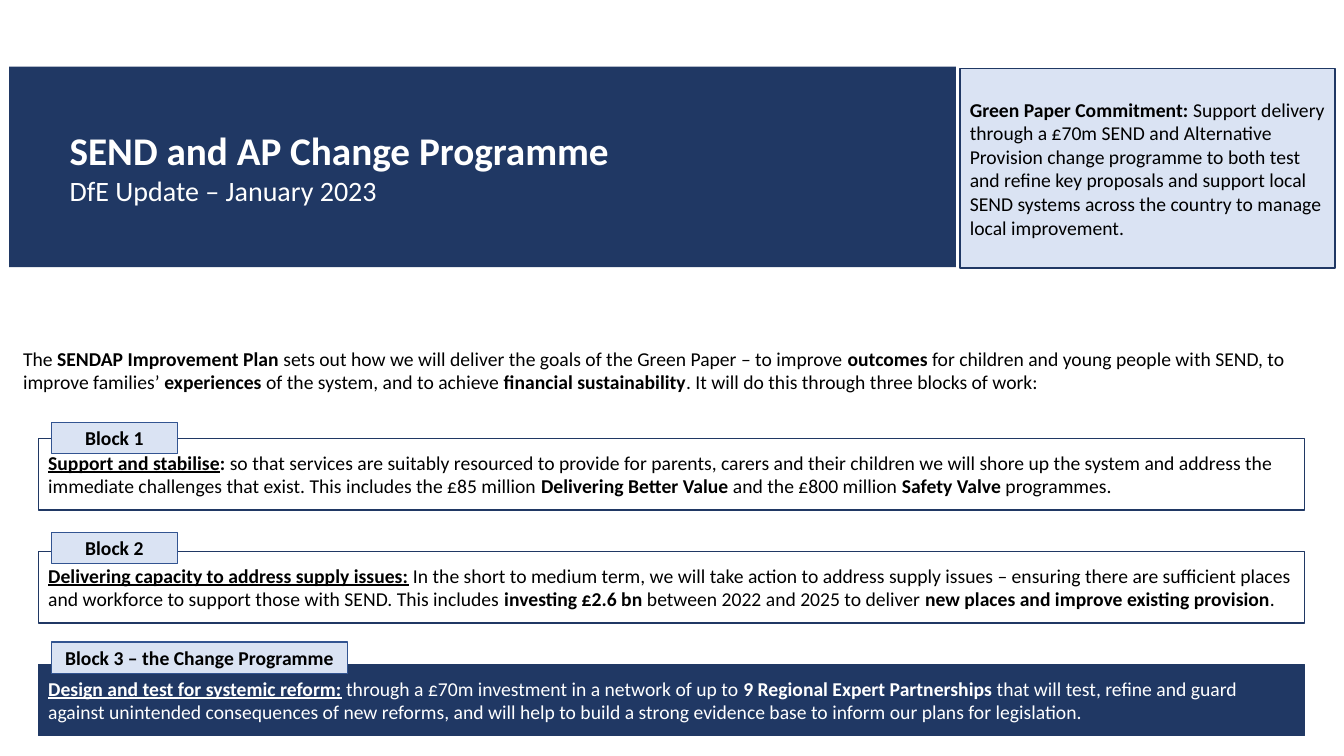
from pptx import Presentation
from pptx import util as u
from pptx.dml import color
from pptx.enum import shapes, text

PX = 9144  # 100 px to the inch
COLOURS = {"navy": "203864", "pale": "DAE3F3", "edge": "325491",
           "white": "FFFFFF", "black": "000000"}


def rgb(name):
    return color.RGBColor.from_string(COLOURS[name])


def add_box(place, fill, line, ink, spans, align=text.PP_ALIGN.LEFT):
    """Add a rectangle; each span is (words, style), b for bold, u for underline."""
    box = page.shapes.add_shape(shapes.MSO_SHAPE.RECTANGLE, *[n * PX for n in place])
    box.shadow.inherit = False
    box.fill.solid()
    box.fill.fore_color.rgb = rgb(fill)
    if line:
        box.line.color.rgb = rgb(line)
        box.line.width = u.Pt(1)
    else:
        box.line.fill.background()
    frame = box.text_frame
    frame.word_wrap = True
    frame.vertical_anchor = text.MSO_ANCHOR.MIDDLE
    para = frame.paragraphs[0]
    para.alignment = align
    para.font.name = "Calibri"
    para.font.size = u.Pt(14)
    for words, style in spans:
        span = para.add_run()
        span.text = words
        span.font.color.rgb = rgb(ink)
        span.font.bold = "b" in style
        span.font.underline = "u" in style


deck = Presentation()
deck.slide_width, deck.slide_height = 1333 * PX, 750 * PX
page = deck.slides.add_slide(deck.slide_layouts[5])

# Title banner
title = page.shapes.title
title.left, title.top, title.width, title.height = [n * PX for n in (9, 66, 939, 199)]
title.fill.solid()
title.fill.fore_color.rgb = rgb("navy")
frame = title.text_frame
frame.text = "SEND and AP Change Programme\nDfE Update – January 2023"
frame.word_wrap = True
frame.auto_size = text.MSO_AUTO_SIZE.NONE
frame.vertical_anchor = text.MSO_ANCHOR.MIDDLE
frame.margin_left = 60 * PX
for para, size, bold in zip(frame.paragraphs, (28, 20), (True, False)):
    para.alignment = text.PP_ALIGN.LEFT
    para.font.name = "Calibri"
    para.font.size = u.Pt(size)
    para.font.bold = bold
    para.font.color.rgb = rgb("white")

# Commitment panel
add_box((952, 68, 372, 198), "pale", "navy", "black", [
    ("Green Paper Commitment:", "b"),
    (" Support delivery through a £70m SEND and Alternative Provision change "
     "programme to both test and refine key proposals and support local SEND "
     "systems across the country to manage local improvement.", ""),
])

# Introduction
add_box((13, 328, 1308, 78), "white", None, "black", [
    ("The ", ""),
    ("SENDAP Improvement Plan ", "b"),
    ("sets out how we will deliver the goals of the Green Paper – to improve", ""),
    (" outcomes ", "b"),
    ("for children and young people with SEND, to improve families’ ", ""),
    ("experiences", "b"),
    (" of the system, and to achieve ", ""),
    ("financial sustainability", "b"),
    (". It will do this through three blocks of work:", ""),
])

# Blocks of work: label, label top, label width, body top, fill, ink, spans
blocks = [
    ("Block 1", 419, 125, 435, "white", "black", [
        ("Support and stabilise", "bu"),
        (":", "b"),
        (" so that services are suitably resourced to provide for parents, carers "
         "and their children we will shore up the system and address the immediate "
         "challenges that exist. This includes the £85 million ", ""),
        ("Delivering Better Value", "b"),
        (" and the £800 million ", ""),
        ("Safety Valve", "b"),
        (" programmes.", ""),
    ]),
    ("Block 2", 528, 125, 547, "white", "black", [
        ("Delivering capacity to address supply issues:", "bu"),
        (" In the short to medium term, we will take action to address supply "
         "issues – ensuring there are sufficient places and workforce to support "
         "those with SEND. This includes ", ""),
        ("investing £2.6 bn", "b"),
        (" between 2022 and 2025 to deliver ", ""),
        ("new places and improve existing provision", "b"),
        (".", ""),
    ]),
    ("Block 3 – the Change Programme", 637, 294, 659, "navy", "white", [
        ("Design and test for systemic reform:", "bu"),
        (" through a £70m investment in a network of up to ", ""),
        ("9 Regional Expert Partnerships ", "b"),
        ("that will test, refine and guard against unintended consequences of new "
         "reforms, and will help to build a strong evidence base to inform our "
         "plans for legislation.", ""),
    ]),
]
for label, label_top, label_width, top, fill, ink, spans in blocks:
    add_box((38, top, 1256, 71), fill, "navy", ink, spans)
    add_box((51, label_top, label_width, 31), "pale", "edge", "black",
            [(label, "b")], text.PP_ALIGN.CENTER)

deck.save("out.pptx")
